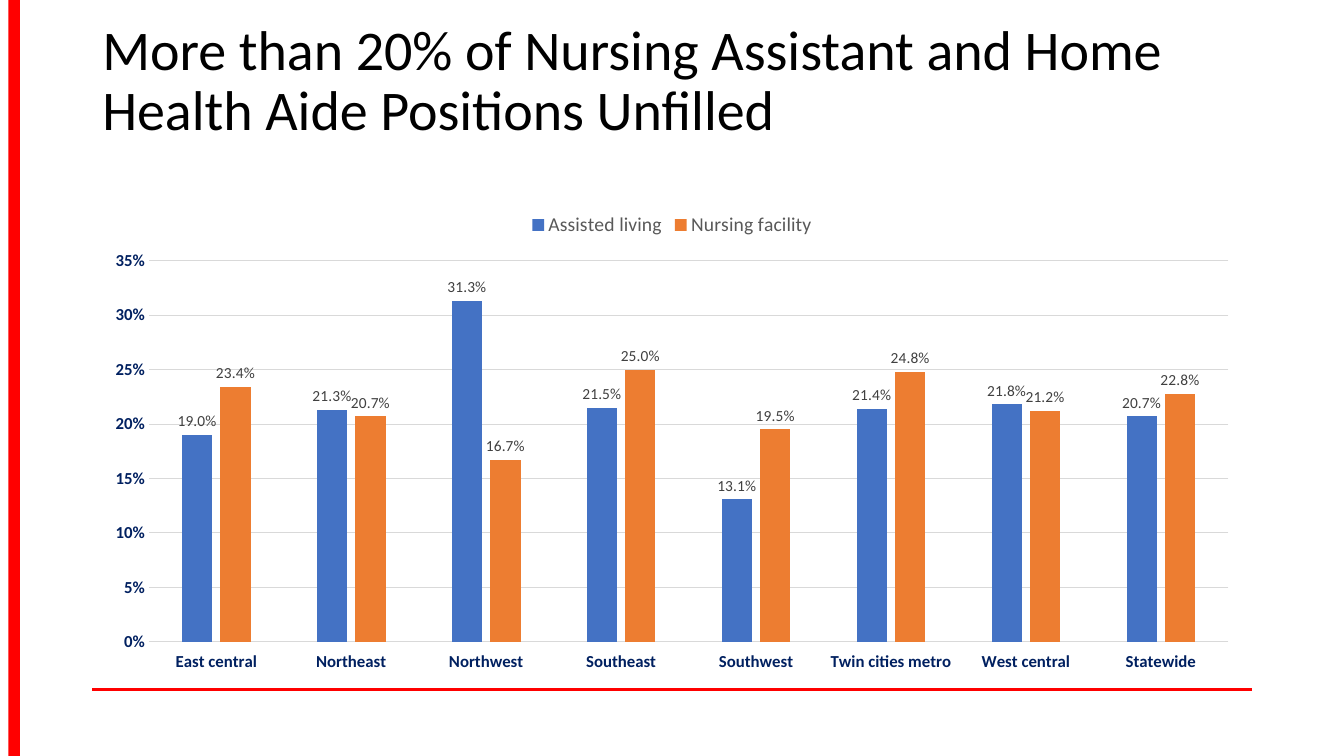
import pptx
import pptx.chart.data
import pptx.dml.color
import pptx.enum.chart
import pptx.enum.shapes
import pptx.enum.text
import pptx.oxml
import pptx.oxml.ns
import pptx.util

Cm, Pt = pptx.util.Cm, pptx.util.Pt
RGBColor = pptx.dml.color.RGBColor

RED = RGBColor(0xFF, 0x00, 0x00)
BLACK = RGBColor(0x00, 0x00, 0x00)
NAVY = RGBColor(0x00, 0x20, 0x60)
BLUE = RGBColor(0x44, 0x72, 0xC4)
ORANGE = RGBColor(0xED, 0x7D, 0x31)
GRID_GREY = RGBColor(0xD9, 0xD9, 0xD9)
LEGEND_GREY = RGBColor(0x59, 0x59, 0x59)
LABEL_GREY = RGBColor(0x40, 0x40, 0x40)

LEFT, WIDTH = 2.33, 29.21

REGIONS = ["East central", "Northeast", "Northwest", "Southeast", "Southwest",
           "Twin cities metro", "West central", "Statewide"]
VACANCIES = [
    ("Assisted living", BLUE,
     [0.190, 0.213, 0.313, 0.215, 0.131, 0.214, 0.218, 0.207]),
    ("Nursing facility", ORANGE,
     [0.234, 0.207, 0.167, 0.250, 0.195, 0.248, 0.212, 0.228]),
]


def set_font(font, size, color, bold=False):
    font.name = "Calibri"
    font.size = Pt(size)
    font.bold = bold
    font.color.rgb = color


def write_text(tf, text, size=18, color=BLACK, bold=False, line_spacing=1.0):
    p = tf.paragraphs[0]
    p.alignment = pptx.enum.text.PP_ALIGN.LEFT
    p.line_spacing = line_spacing
    r = p.add_run()
    r.text = text
    set_font(r.font, size, color, bold)


class SlideBuilder:
    def __init__(self, slide):
        self.s = slide

    def bar(self, x, y, w, h, color):
        sp = self.s.shapes.add_shape(pptx.enum.shapes.MSO_SHAPE.RECTANGLE,
                                     Cm(x), Cm(y), Cm(w), Cm(h))
        sp.shadow.inherit = False
        sp.fill.solid()
        sp.fill.fore_color.rgb = color
        sp.line.fill.background()

    def rule(self, x, y, w, color, weight):
        line = self.s.shapes.add_connector(
            pptx.enum.shapes.MSO_CONNECTOR.STRAIGHT,
            Cm(x), Cm(y), Cm(x + w), Cm(y))
        line.line.color.rgb = color
        line.line.width = Pt(weight)
        sp_pr = line._element.spPr
        sp_pr.append(sp_pr.makeelement(pptx.oxml.ns.qn("a:effectLst"), {}))

    def title(self, text, x, y, w, h):
        tf = self.s.shapes.add_textbox(Cm(x), Cm(y), Cm(w), Cm(h)).text_frame
        tf.word_wrap = True
        tf.vertical_anchor = pptx.enum.text.MSO_ANCHOR.MIDDLE
        tf.margin_bottom = Cm(1.68)
        write_text(tf, text, size=40, line_spacing=0.9)

    def column_chart(self, x, y, w, h, categories, series):
        data = pptx.chart.data.CategoryChartData(number_format="0.0%")
        data.categories = categories
        for name, _, values in series:
            data.add_series(name, values)
        chart = self.s.shapes.add_chart(
            pptx.enum.chart.XL_CHART_TYPE.COLUMN_CLUSTERED,
            Cm(x), Cm(y), Cm(w), Cm(h), data).chart
        set_font(chart.font, 10, BLACK)
        chart.has_title = False

        chart.has_legend = True
        chart.legend.position = pptx.enum.chart.XL_LEGEND_POSITION.TOP
        chart.legend.include_in_layout = False
        set_font(chart.legend.font, 14, LEGEND_GREY)

        for axis in (chart.category_axis, chart.value_axis):
            axis.major_tick_mark = pptx.enum.chart.XL_TICK_MARK.NONE
            axis.minor_tick_mark = pptx.enum.chart.XL_TICK_MARK.NONE
            set_font(axis.tick_labels.font, 12, NAVY, bold=True)
        cat_axis, val_axis = chart.category_axis, chart.value_axis
        cat_axis.tick_label_position = pptx.enum.chart.XL_TICK_LABEL_POSITION.LOW
        val_axis.minimum_scale = 0
        val_axis.maximum_scale = 0.35
        val_axis.major_unit = 0.05
        val_axis.tick_labels.number_format = "0%"
        val_axis.tick_labels.number_format_is_linked = False
        val_axis.format.line.fill.background()
        for line in (cat_axis.format.line, val_axis.major_gridlines.format.line):
            line.color.rgb = GRID_GREY
            line.width = Pt(0.75)

        plot = chart.plots[0]
        plot.gap_width = 219
        plot.overlap = -27
        plot.vary_by_categories = False
        for ser, (_, color, _) in zip(plot.series, series):
            ser.format.fill.solid()
            ser.format.fill.fore_color.rgb = color
            ser.invert_if_negative = False
            labels = ser.data_labels
            labels.show_value = True
            labels.number_format = "0.0%"
            labels.number_format_is_linked = False
            labels.position = pptx.enum.chart.XL_LABEL_POSITION.OUTSIDE_END
            set_font(labels.font, 11, LABEL_GREY)


def main():
    prs = pptx.Presentation()
    prs.slide_width, prs.slide_height = Cm(33.87), Cm(19.05)
    b = SlideBuilder(prs.slides.add_slide(prs.slide_layouts[6]))
    b.rule(LEFT, 17.37, WIDTH, RED, 2)
    b.bar(0.21, 0, 0.29, 19.05, RED)
    b.title("More than 20% of Nursing Assistant and Home Health Aide "
            "Positions Unfilled", LEFT, 1.01, WIDTH, 3.68)
    b.column_chart(LEFT, 5.08, WIDTH, 12.09, REGIONS, VACANCIES)
    prs.save("out.pptx")


if __name__ == "__main__":
    main()
